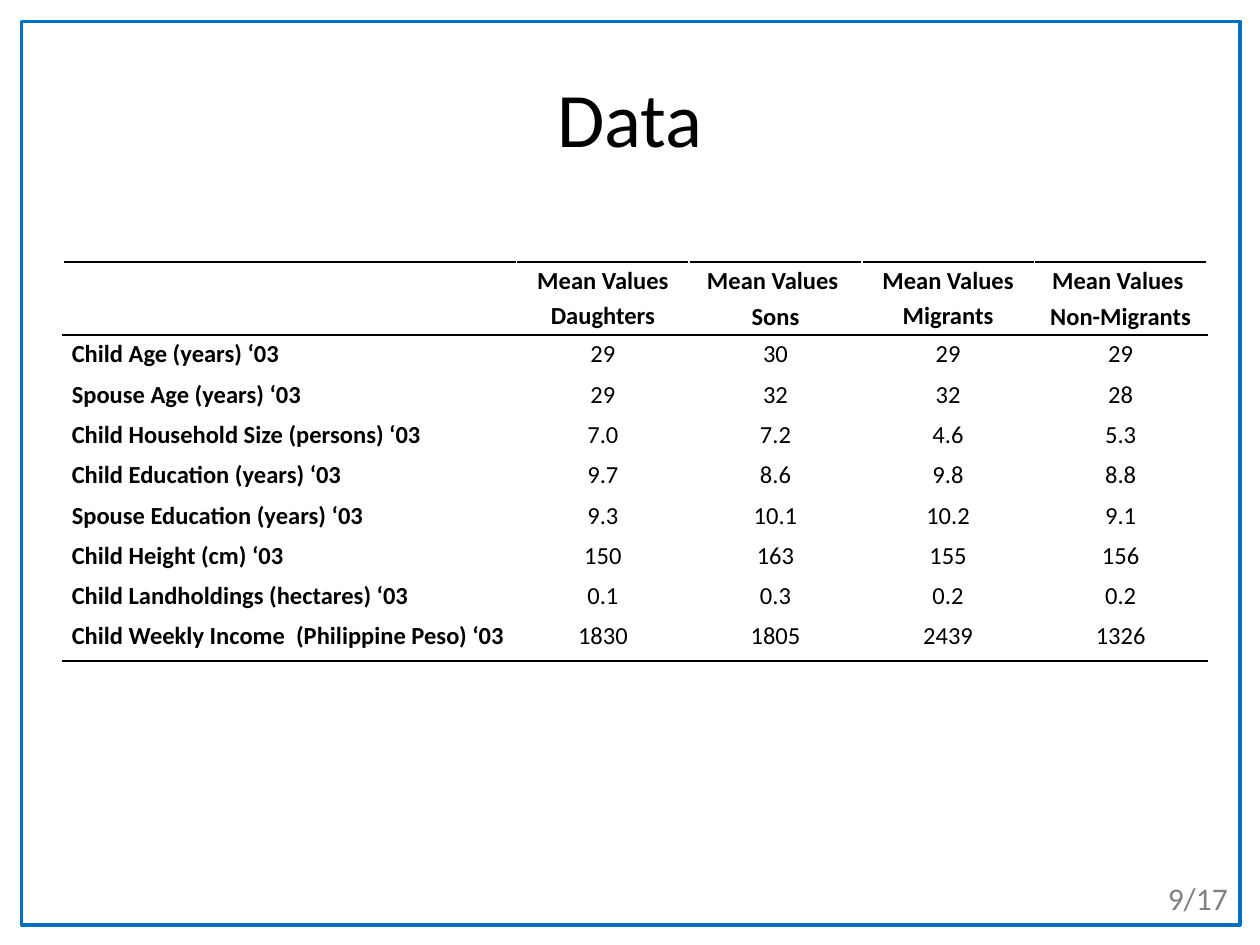
"""Build the slide with the table of mean values."""
import dataclasses

import pptx
import pptx.dml.color
import pptx.enum.shapes
import pptx.enum.text
import pptx.oxml
import pptx.oxml.ns
import pptx.util
from pptx.util import Inches, Pt

ALIGN = pptx.enum.text.PP_ALIGN
ANCHOR = pptx.enum.text.MSO_ANCHOR


@dataclasses.dataclass(frozen=True)
class Theme:
    font: str = "Calibri"
    text: str = "000000"
    muted: str = "808080"
    frame: str = "0070C0"
    blank: str = "FFFFFF"
    title_size: int = 44
    table_size: int = 14
    page_size: int = 18


THEME = Theme()
HEADERS = ["", "Mean Values Daughters", "Mean Values \nSons",
           "Mean Values Migrants", "Mean Values \nNon-Migrants"]
ROWS = [
    ["Child Age (years) ‘03", "29", "30", "29", "29"],
    ["Spouse Age (years) ‘03", "29", "32", "32", "28"],
    ["Child Household Size (persons) ‘03", "7.0", "7.2", "4.6", "5.3"],
    ["Child Education (years) ‘03", "9.7", "8.6", "9.8", "8.8"],
    ["Spouse Education (years) ‘03", "9.3", "10.1", "10.2", "9.1"],
    ["Child Height (cm) ‘03", "150", "163", "155", "156"],
    ["Child Landholdings (hectares) ‘03", "0.1", "0.3", "0.2", "0.2"],
    ["Child Weekly Income  (Philippine Peso) ‘03", "1830", "1805", "2439", "1326"],
]
COLUMN_WIDTHS = [3.6] + [1.37] * 4
ROW_HEIGHTS = [0.58] + [0.32] * 7 + [0.35]


def rgb(color):
    return pptx.dml.color.RGBColor.from_string(color)


def write_text(frame, text, size, color=THEME.text, bold=False,
               align=ALIGN.LEFT, line_spacing=None, space_after=None):
    frame.text = text
    for paragraph in frame.paragraphs:
        paragraph.alignment = align
        paragraph.line_spacing = line_spacing
        paragraph.space_after = space_after
        paragraph.font.name = THEME.font
        paragraph.font.size = Pt(size)
        paragraph.font.bold = bold
        paragraph.font.color.rgb = rgb(color)


def add_frame(slide):
    shape = slide.shapes.add_shape(
        pptx.enum.shapes.MSO_SHAPE.RECTANGLE,
        Inches(0.17), Inches(0.17), Inches(9.67), Inches(7.17))
    shape.shadow.inherit = False
    shape.fill.background()
    shape.line.color.rgb = rgb(THEME.frame)
    shape.line.width = Pt(2)


def add_title(slide, text):
    title = slide.shapes.title
    title.left, title.top = Inches(0.5), Inches(0.3)
    title.width, title.height = Inches(9), Inches(1.25)
    title.text_frame.vertical_anchor = ANCHOR.MIDDLE
    write_text(title.text_frame, text, THEME.title_size, align=ALIGN.CENTER)


def set_borders(cell, top, bottom):
    properties = cell._tc.get_or_add_tcPr()
    sides = {"L": THEME.blank, "R": THEME.blank, "T": top, "B": bottom}
    for side, color in sides.items():
        properties.append(pptx.oxml.parse_xml(
            f'<a:ln{side} {pptx.oxml.ns.nsdecls("a")} w="{Pt(1)}">'
            f'<a:solidFill><a:srgbClr val="{color}"/></a:solidFill></a:ln{side}>'))


def format_cell(cell, text, row, column):
    cell.margin_left = cell.margin_right = Inches(0.07)
    cell.margin_top = cell.margin_bottom = 0
    cell.vertical_anchor = ANCHOR.TOP
    write_text(cell.text_frame, text, THEME.table_size,
               bold=row == 0 or column == 0,
               align=ALIGN.CENTER if column else ALIGN.LEFT,
               line_spacing=1.15, space_after=Pt(0.6))
    ruled_edges = (0, 1, len(ROW_HEIGHTS))
    top, bottom = (THEME.text if edge in ruled_edges else THEME.blank
                   for edge in (row, row + 1))
    set_borders(cell, top, bottom)
    cell.fill.background()


def add_means_table(slide):
    table = slide.shapes.add_table(
        len(ROW_HEIGHTS), len(COLUMN_WIDTHS), Inches(0.5), Inches(2.08),
        Inches(sum(COLUMN_WIDTHS)), Inches(sum(ROW_HEIGHTS))).table
    table.first_row = table.horz_banding = False
    for column, width in zip(table.columns, COLUMN_WIDTHS):
        column.width = Inches(width)
    for row, height in zip(table.rows, ROW_HEIGHTS):
        row.height = Inches(height)
    for row, texts in enumerate([HEADERS] + ROWS):
        for column, text in enumerate(texts):
            format_cell(table.cell(row, column), text, row, column)


def add_page_number(slide, text):
    box = slide.shapes.add_textbox(
        Inches(9.17), Inches(6.93), Inches(0.83), Inches(0.4))
    box.text_frame.word_wrap = True
    box.text_frame.auto_size = pptx.enum.text.MSO_AUTO_SIZE.SHAPE_TO_FIT_TEXT
    write_text(box.text_frame, text, THEME.page_size, color=THEME.muted)


def main():
    presentation = pptx.Presentation()
    presentation.slide_width = Inches(10)
    presentation.slide_height = Inches(7.5)
    slide = presentation.slides.add_slide(presentation.slide_layouts[5])
    add_frame(slide)
    add_title(slide, "Data")
    add_means_table(slide)
    add_page_number(slide, "9/17")
    presentation.save("out.pptx")


if __name__ == "__main__":
    main()
